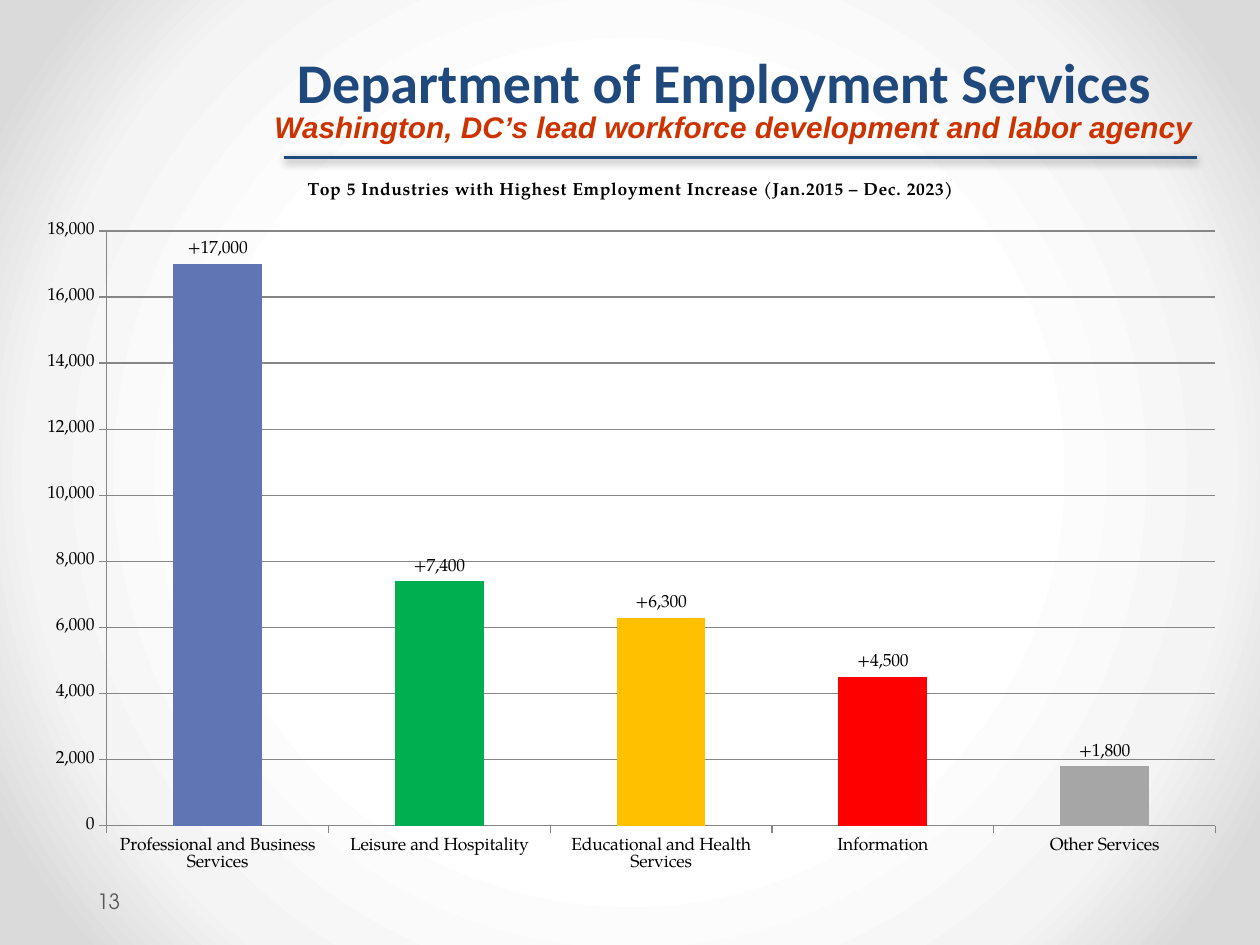
from lxml import etree
from pptx import Presentation
from pptx.chart.data import CategoryChartData
from pptx.dml.color import RGBColor
from pptx.enum.chart import XL_CHART_TYPE, XL_LABEL_POSITION, XL_TICK_MARK
from pptx.enum.shapes import MSO_CONNECTOR
from pptx.enum.text import MSO_ANCHOR, PP_ALIGN
from pptx.oxml import parse_xml
from pptx.oxml.ns import nsdecls, qn
from pptx.util import Inches, Pt

COLUMN = XL_CHART_TYPE.COLUMN_CLUSTERED
OUTER = XL_LABEL_POSITION.OUTSIDE_END
OUT = XL_TICK_MARK.OUTSIDE
STRAIGHT = MSO_CONNECTOR.STRAIGHT
TOP, MIDDLE = MSO_ANCHOR.TOP, MSO_ANCHOR.MIDDLE
LEFT, CENTER = PP_ALIGN.LEFT, PP_ALIGN.CENTER

# Content
HEAD = "Department of Employment Services"
MOTTO = "Washington, DC’s lead workforce development and labor agency"
TITLE = "Top 5 Industries with Highest Employment Increase (Jan.2015 – Dec. 2023)"
PAGE = "13"
JOBS = [
    ("Professional and Business Services", 17000, "blue"),
    ("Leisure and Hospitality", 7400, "green"),
    ("Educational and Health Services", 6300, "gold"),
    ("Information", 4500, "red"),
    ("Other Services", 1800, "gray"),
]
COLORS = {
    "navy": "1F497D", "rust": "CC3300", "slate": "595959", "black": "000000",
    "blue": "6076B4", "green": "00B050", "gold": "FFC000", "red": "FF0000",
    "gray": "A6A6A6", "grid": "868686",
}
GLOW = [(50, "FFFFFF"), (76, "F4F4F4"), (92, "DADADA")]
SERIF = "TeX Gyre Pagella"
PLOT = {"x": 0.07, "y": 0.1, "w": 0.91, "h": 0.81}


def color(name):
    return RGBColor.from_string(COLORS[name])


def style(font, face, size, hue, bold=False, italic=False):
    font.name, font.size = face, Pt(size)
    font.bold, font.italic = bold, italic
    font.color.rgb = color(hue)


def add_text(slide, text, box, face, size, hue, bold=False, italic=False,
             align=LEFT, anchor=TOP, inset=0.1):
    frame = slide.shapes.add_textbox(*map(Inches, box)).text_frame
    frame.word_wrap = True
    frame.vertical_anchor = anchor
    frame.margin_left = Inches(inset)
    par = frame.paragraphs[0]
    par.alignment = align
    run = par.add_run()
    run.text = text
    style(run.font, face, size, hue, bold, italic)


def paint_back(slide):
    fill = slide.background.fill
    fill.gradient()
    stops = "".join(
        f'<a:gs pos="{pos * 1000}"><a:srgbClr val="{hue}"/></a:gs>'
        for pos, hue in GLOW)
    glow = parse_xml(
        f'<a:gradFill {nsdecls("a")} rotWithShape="1"><a:gsLst>{stops}</a:gsLst>'
        '<a:path path="circle"><a:fillToRect l="50000" t="50000" r="50000"'
        ' b="50000"/></a:path></a:gradFill>')
    old = next(slide.element.iter(qn("a:gradFill")))
    old.getparent().replace(old, glow)


def add_rule(slide):
    ends = map(Inches, (2.25, 1.25, 9.5, 1.25))
    rule = slide.shapes.add_connector(STRAIGHT, *ends)
    rule.line.color.rgb = color("navy")
    rule.line.width = Pt(2)
    rule._element.spPr.append(parse_xml(
        f'<a:effectLst {nsdecls("a")}><a:outerShdw blurRad="63500" dist="20000"'
        ' dir="5400000" rotWithShape="0"><a:srgbClr val="000000">'
        '<a:alpha val="38000"/></a:srgbClr></a:outerShdw></a:effectLst>'))


def place_plot(chart):
    area = chart._chartSpace.chart.plotArea
    for old in area.findall(qn("c:layout")):
        area.remove(old)
    layout = etree.Element(qn("c:layout"))
    manual = etree.SubElement(layout, qn("c:manualLayout"))
    parts = {"layoutTarget": "inner", "xMode": "edge", "yMode": "edge", **PLOT}
    for tag, val in parts.items():
        etree.SubElement(manual, qn("c:" + tag)).set("val", str(val))
    area.insert(0, layout)


def add_jobs(slide):
    data = CategoryChartData(number_format="#,##0")
    data.categories = [name for name, _, _ in JOBS]
    data.add_series("Series 1", [val for _, val, _ in JOBS])
    box = map(Inches, (0.17, 1.25, 9.67, 5.83))
    chart = slide.shapes.add_chart(COLUMN, *box, data).chart
    style(chart.font, SERIF, 10, "black")
    chart.has_legend = False

    # Chart title
    chart.has_title = True
    par = chart.chart_title.text_frame.paragraphs[0]
    run = par.add_run()
    run.text = TITLE
    style(run.font, SERIF, 10, "black", bold=True)
    run._r.get_or_add_rPr().set("spc", "50")
    chart.chart_title.include_in_layout = False

    # Axes
    level = chart.value_axis
    level.minimum_scale, level.maximum_scale = 0, 18000
    level.major_unit = 2000
    level.has_major_gridlines = True
    level.tick_labels.number_format = "#,##0"
    level.tick_labels.number_format_is_linked = False
    for axis in (level, chart.category_axis):
        axis.major_tick_mark = OUT
        axis.format.line.color.rgb = color("grid")
    level.major_gridlines.format.line.color.rgb = color("grid")

    # Columns and their labels
    plot = chart.plots[0]
    plot.gap_width = 150
    plot.vary_by_categories = False
    bars = plot.series[0]
    bars.format.fill.solid()
    bars.format.fill.fore_color.rgb = color("blue")
    for i, (_, _, hue) in enumerate(JOBS):
        fill = bars.points[i].format.fill
        fill.solid()
        fill.fore_color.rgb = color(hue)
    labels = bars.data_labels
    labels.show_value = True
    labels.position = OUTER
    labels.number_format = "+#,##0"
    labels.number_format_is_linked = False
    style(labels.font, SERIF, 10, "black")
    place_plot(chart)


def main():
    deck = Presentation()
    deck.slide_width, deck.slide_height = Inches(10), Inches(7.5)
    slide = deck.slides.add_slide(deck.slide_layouts[6])
    paint_back(slide)
    add_text(slide, HEAD, (2, 0.33, 7.5, 0.75), "Calibri", 32, "navy",
             bold=True, align=CENTER)
    add_text(slide, MOTTO, (2.08, 0.81, 7.58, 0.38), "Arial", 17, "rust",
             bold=True, italic=True)
    add_rule(slide)
    add_text(slide, PAGE, (0.72, 6.95, 3.11, 0.4), "TeX Gyre Adventor", 12,
             "slate", anchor=MIDDLE, inset=0.05)
    add_jobs(slide)
    deck.save("out.pptx")


if __name__ == "__main__":
    main()
